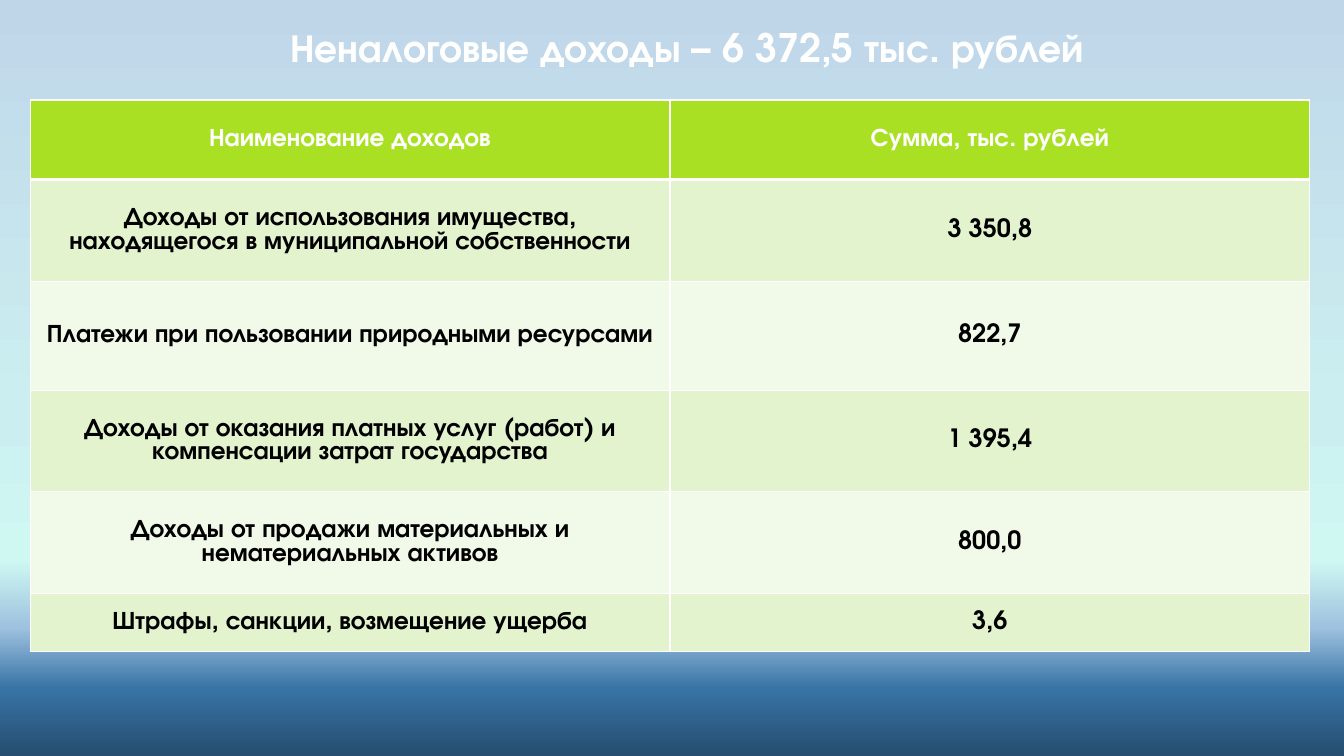
import lxml.etree
import pptx
import pptx.dml.color
import pptx.enum.text
import pptx.oxml.ns
import pptx.util

Pt = pptx.util.Pt
RGBColor = pptx.dml.color.RGBColor
qn = pptx.oxml.ns.qn

FONT = "TeX Gyre Adventor"
WHITE = RGBColor(0xFF, 0xFF, 0xFF)
BLACK = RGBColor(0x00, 0x00, 0x00)
HEADER_GREEN = RGBColor(0xA9, 0xE0, 0x23)
BAND_DARK = RGBColor(0xE2, 0xF3, 0xCD)
BAND_LIGHT = RGBColor(0xF1, 0xF9, 0xE8)
SKY_STOPS = [
    (0, RGBColor(0xBF, 0xD6, 0xE9)),
    (54, RGBColor(0xCB, 0xEF, 0xF0)),
    (74, RGBColor(0xCF, 0xF8, 0xF2)),
    (83, RGBColor(0x9F, 0xC2, 0xDF)),
    (91, RGBColor(0x38, 0x74, 0xA6)),
    (100, RGBColor(0x25, 0x4D, 0x6F)),
]

TITLE = "Неналоговые доходы – 6 372,5 тыс. рублей"
INCOME_ROWS = [
    ("Наименование доходов", "Сумма, тыс. рублей"),
    ("Доходы от использования имущества, находящегося в муниципальной собственности", "3 350,8"),
    ("Платежи при пользовании природными ресурсами", "822,7"),
    ("Доходы от оказания платных услуг (работ) и компенсации затрат государства", "1 395,4"),
    ("Доходы от продажи материальных и нематериальных активов", "800,0"),
    ("Штрафы, санкции, возмещение ущерба", "3,6"),
]
ROW_HEIGHTS = [56.8, 72.6, 77.8, 72.6, 72.6, 41.6]
COLUMN_WIDTH = 457


def set_background(page):
    fill = page.background.fill
    fill.gradient()
    fill.gradient_angle = 270
    # More than two gradient stops need XML
    stops = page.background._cSld.find(".//" + qn("a:gsLst"))
    for stop in list(stops):
        stops.remove(stop)
    for percent, color in SKY_STOPS:
        stop = lxml.etree.SubElement(stops, qn("a:gs"), pos=str(percent * 1000))
        lxml.etree.SubElement(stop, qn("a:srgbClr"), val=str(color))


def write_text(frame, text, size, color):
    frame.word_wrap = True
    frame.text = text
    para = frame.paragraphs[0]
    para.alignment = pptx.enum.text.PP_ALIGN.CENTER
    font = para.runs[0].font
    font.name = FONT
    font.size = Pt(size)
    font.bold = True
    font.color.rgb = color


def add_title(page):
    box = page.shapes.add_textbox(Pt(158.4), Pt(13), Pt(665.3), Pt(41))
    write_text(box.text_frame, TITLE, 28, WHITE)


def set_borders(cell, top, bottom):
    properties = cell._tc.get_or_add_tcPr()
    widths = {"a:lnL": 1, "a:lnR": 1, "a:lnT": top, "a:lnB": bottom}
    for position, (tag, width) in enumerate(widths.items()):
        line = lxml.etree.Element(qn(tag), w=str(Pt(width)))
        solid = lxml.etree.SubElement(line, qn("a:solidFill"))
        lxml.etree.SubElement(solid, qn("a:srgbClr"), val=str(WHITE))
        properties.insert(position, line)


def fill_cell(cell, text, row):
    is_header = row == 0
    band = BAND_DARK if row % 2 else BAND_LIGHT
    write_text(cell.text_frame, text, 18, WHITE if is_header else BLACK)
    cell.vertical_anchor = pptx.enum.text.MSO_ANCHOR.MIDDLE
    cell.fill.solid()
    cell.fill.fore_color.rgb = HEADER_GREEN if is_header else band
    # The header is set off by a thicker rule
    set_borders(cell, top=3 if row == 1 else 1, bottom=3 if is_header else 1)


def add_income_table(page):
    table = page.shapes.add_table(
        len(INCOME_ROWS), 2, Pt(21.6), Pt(71.5),
        Pt(2 * COLUMN_WIDTH), Pt(sum(ROW_HEIGHTS)),
    ).table
    for column in table.columns:
        column.width = Pt(COLUMN_WIDTH)
    for row, texts in enumerate(INCOME_ROWS):
        table.rows[row].height = Pt(ROW_HEIGHTS[row])
        for column, text in enumerate(texts):
            fill_cell(table.cell(row, column), text, row)


def main():
    deck = pptx.Presentation()
    deck.slide_width = Pt(960)
    deck.slide_height = Pt(540)
    page = deck.slides.add_slide(deck.slide_layouts[6])
    set_background(page)
    add_income_table(page)
    add_title(page)
    deck.save("out.pptx")


if __name__ == "__main__":
    main()
